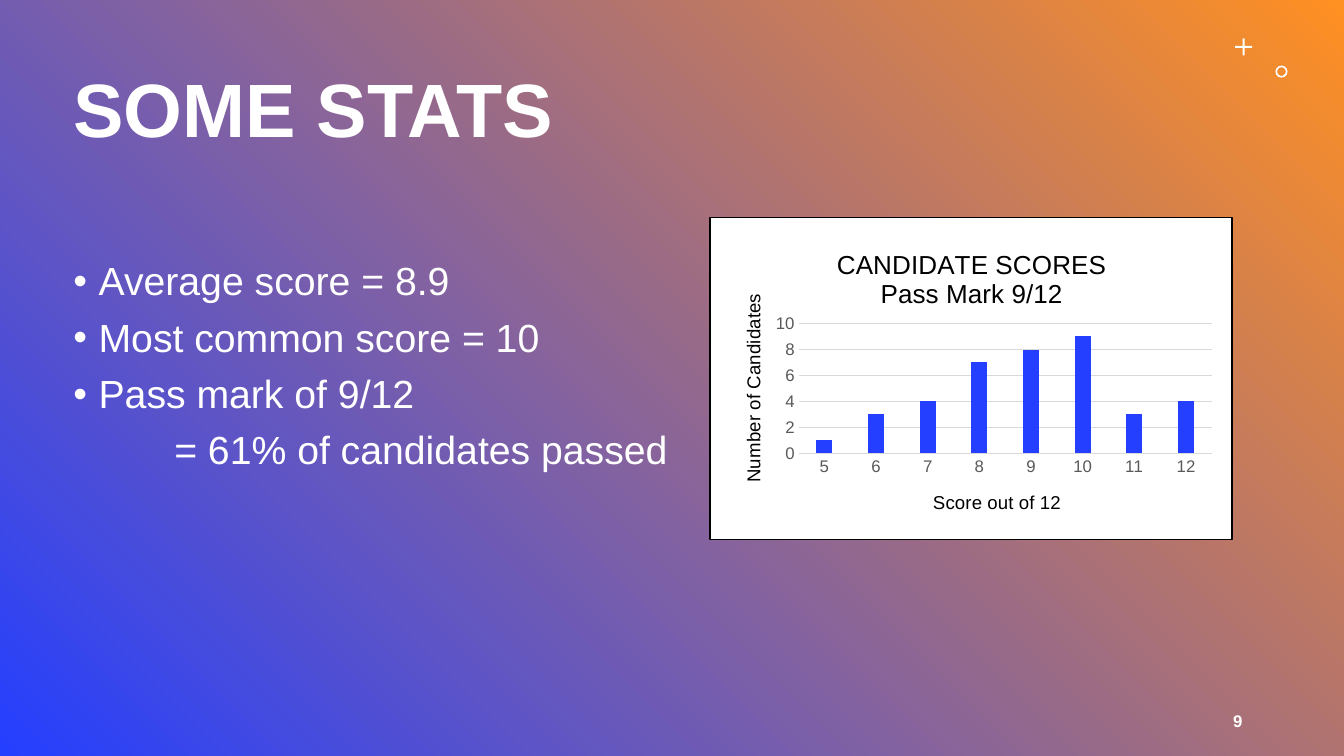
"""Build a statistics slide with key figures and a column chart of scores."""
from lxml.etree import SubElement
from pptx import Presentation
from pptx.chart.data import CategoryChartData
from pptx.dml.color import RGBColor
from pptx.enum.chart import XL_CHART_TYPE, XL_TICK_MARK
from pptx.enum.shapes import MSO_SHAPE
from pptx.enum.text import MSO_ANCHOR, PP_ALIGN
from pptx.oxml import parse_xml
from pptx.oxml.ns import nsdecls, qn
from pptx.util import Inches, Pt

COLOURS = {
    "blue": "243FFF",
    "orange": "FF9022",
    "white": "FFFFFF",
    "black": "000000",
    "label": "595959",
    "grid": "D9D9D9",
}
FONT = "Arial"


def colour(name):
    return RGBColor.from_string(COLOURS[name])


def style_font(font, size, name="white", bold=False):
    font.name = FONT
    font.size = Pt(size)
    font.bold = bold
    font.color.rgb = colour(name)


def write(para, text, size=28, name="white", bold=False, align=PP_ALIGN.LEFT,
          line=1.0, before=0, margin=0, bullet=False, tracking=0):
    para.alignment = align
    para.line_spacing = line
    para.space_before = Pt(before)
    span = para.add_run()
    span.text = text
    style_font(span.font, size, name, bold)
    if tracking:
        span.font._element.set("spc", str(tracking * 100))
    properties = para._p.get_or_add_pPr()
    properties.set("marL", str(Inches(margin)))
    properties.set("indent", str(Inches(-margin if bullet else 0)))
    if bullet:
        SubElement(properties, qn("a:buFont")).set("typeface", FONT)
        SubElement(properties, qn("a:buChar")).set("char", "•")


def place(element, x, y, width=None, height=None):
    values = {"x": x, "y": y, "w": width, "h": height}
    modes = "".join(f'<c:{key}Mode val="edge"/>' for key in "xy")
    target = '<c:layoutTarget val="inner"/>' if width else ""
    sizes = "".join(f'<c:{key} val="{value}"/>' for key, value in values.items() if value)
    for layout in element.findall(qn("c:layout")):
        element.remove(layout)
    layout = parse_xml(f'<c:layout {nsdecls("c")}><c:manualLayout>{target}{modes}{sizes}'
                       "</c:manualLayout></c:layout>")
    text = element.find(qn("c:tx"))
    element.insert(0 if text is None else 1, layout)


def add_title(owner, lines, size, x, y):
    owner.has_title = True
    title = owner.chart_title if hasattr(owner, "chart_title") else owner.axis_title
    frame = title.text_frame
    frame.text = "\n".join(lines)
    for para in frame.paragraphs:
        for span in para.runs:
            style_font(span.font, size, "black")
    place(title._element, x, y)


class SlideBuilder:
    def __init__(self, deck):
        self.page = deck.slides.add_slide(deck.slide_layouts[6])

    def background(self, start, end):
        fill = self.page.background.fill
        fill.gradient()
        fill.gradient_angle = 45
        for stop, name, position in zip(fill.gradient_stops, (start, end), (0, 1)):
            stop.color.rgb = colour(name)
            stop.position = position

    def shape(self, kind, left, top, width, height, line=None, adjust=None):
        shape = self.page.shapes.add_shape(
            kind, Inches(left), Inches(top), Inches(width), Inches(height))
        shape.shadow.inherit = False
        shape.fill.solid()
        shape.fill.fore_color.rgb = colour("white")
        if line:
            shape.line.color.rgb = colour(line)
            shape.line.width = Pt(1)
        else:
            shape.line.fill.background()
        if adjust:
            shape.adjustments[0] = adjust

    def text(self, left, top, width, height, items, anchor=MSO_ANCHOR.MIDDLE, **style):
        box = self.page.shapes.add_textbox(
            Inches(left), Inches(top), Inches(width), Inches(height))
        frame = box.text_frame
        frame.word_wrap = True
        frame.vertical_anchor = anchor
        for index, (text, extra) in enumerate(items):
            para = frame.add_paragraph() if index else frame.paragraphs[0]
            write(para, text, **style, **extra)

    def column_chart(self, left, top, width, height, scores):
        data = CategoryChartData()
        data.categories = [str(score) for score in scores]
        data.add_series("Series 1", scores.values())
        chart = self.page.shapes.add_chart(
            XL_CHART_TYPE.COLUMN_CLUSTERED, Inches(left), Inches(top),
            Inches(width), Inches(height), data).chart
        style_font(chart.font, 10, "black")
        chart.has_legend = False
        plot = chart.plots[0]
        plot.gap_width = 219
        plot.overlap = -27
        plot.vary_by_categories = False
        bars = plot.series[0].format.fill
        bars.solid()
        bars.fore_color.rgb = colour("blue")
        for axis in (chart.category_axis, chart.value_axis):
            axis.major_tick_mark = axis.minor_tick_mark = XL_TICK_MARK.NONE
            style_font(axis.tick_labels.font, 12, "label")
        chart.value_axis.format.line.fill.background()
        chart.value_axis.minimum_scale = 0
        chart.value_axis.maximum_scale = 10
        chart.value_axis.major_unit = 2
        grid = chart.value_axis.major_gridlines
        for line in (chart.category_axis.format.line, grid.format.line):
            line.color.rgb = colour("grid")
            line.width = Pt(0.75)
        add_title(chart, ["CANDIDATE SCORES", "Pass Mark 9/12"], 18.6, 0.23, 0.06)
        add_title(chart.category_axis, ["Score out of 12"], 13.3, 0.42, 0.86)
        add_title(chart.value_axis, ["Number of Candidates"], 13.3, 0.04, 0.21)
        place(chart._chartSpace.chart.plotArea, 0.16, 0.32, 0.82, 0.43)


def main():
    deck = Presentation()
    deck.slide_width = Inches(13.33)
    deck.slide_height = Inches(7.5)
    slide = SlideBuilder(deck)
    slide.background("blue", "orange")
    slide.shape(MSO_SHAPE.CROSS, 12.25, 0.38, 0.17, 0.17, adjust=0.44)
    slide.shape(MSO_SHAPE.DONUT, 12.65, 0.65, 0.12, 0.12, adjust=0.14)
    slide.shape(MSO_SHAPE.RECTANGLE, 7.04, 2.16, 5.18, 3.19, line="black")
    slide.text(0.63, 0.4, 11.78, 1.45, [("SOME STATS", {})], size=54, bold=True, line=0.9)
    bullet = {"margin": 0.25, "bullet": True}
    slide.text(0.63, 2.55, 11.78, 4.21, [
        ("Average score = 8.9", bullet),
        ("Most common score = 10", bullet),
        ("Pass mark of 9/12", bullet),
        ("= 61% of candidates passed", {"margin": 1}),
    ], anchor=MSO_ANCHOR.TOP, line=0.9, before=10)
    slide.text(9.42, 6.95, 3, 0.4, [("9", {})], size=12, bold=True,
               align=PP_ALIGN.RIGHT, tracking=1)
    slide.column_chart(7.12, 2.25, 5, 3,
                       {5: 1, 6: 3, 7: 4, 8: 7, 9: 8, 10: 9, 11: 3, 12: 4})
    deck.save("out.pptx")


if __name__ == "__main__":
    main()
